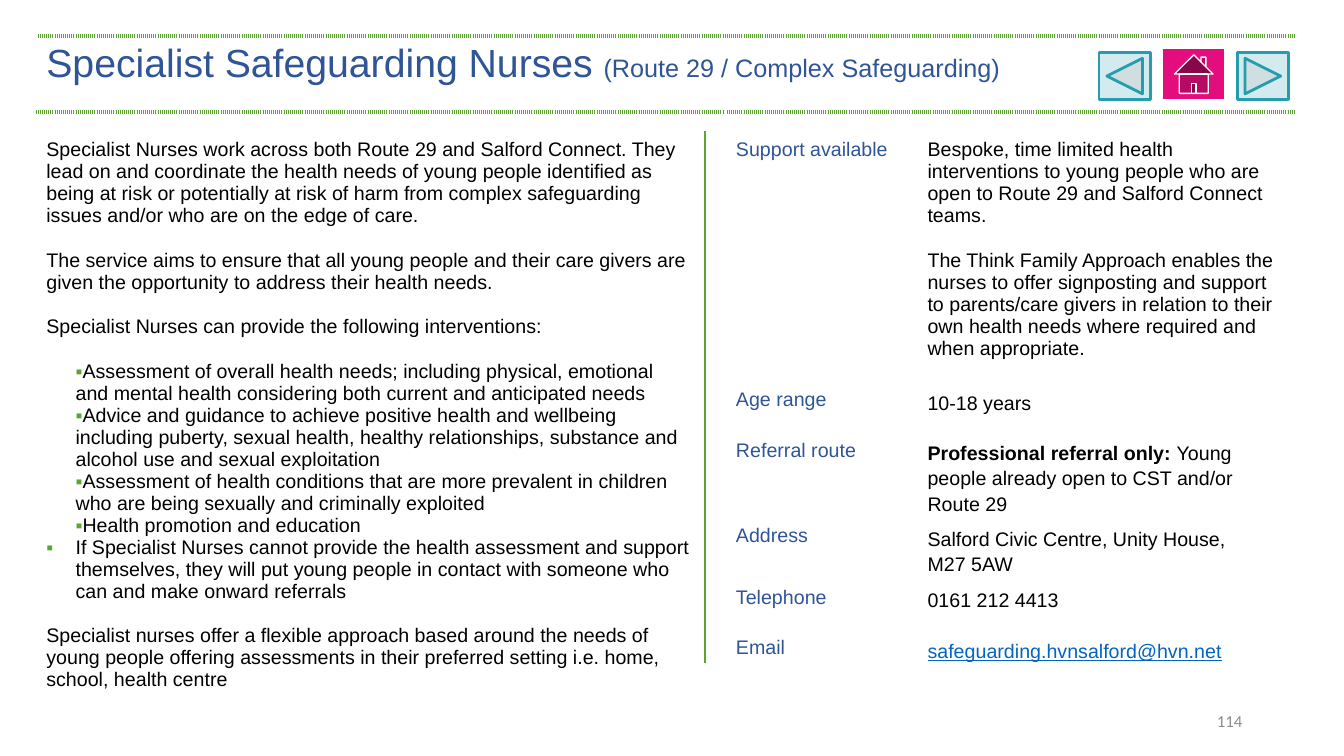
from dataclasses import dataclass

from lxml.etree import SubElement
from pptx import Presentation
from pptx.dml.color import RGBColor
from pptx.enum.shapes import MSO_CONNECTOR, MSO_SHAPE
from pptx.enum.text import MSO_ANCHOR, PP_ALIGN
from pptx.oxml.ns import qn
from pptx.util import Inches, Pt


@dataclass(frozen=True)
class Theme:
    blue: str = "2F5597"
    green: str = "5CA532"
    teal: str = "259DAC"
    pink: str = "E40D7E"
    link: str = "0563C1"
    grey: str = "8C8C8C"
    black: str = "000000"
    white: str = "FFFFFF"
    font: str = "Arial"
    number_font: str = "Calibri"
    title: int = 28
    subtitle: int = 18
    body: int = 14
    number: int = 12


theme = Theme()


def add_run(paragraph, text, size=theme.body, color=theme.black, font=theme.font,
            bold=False, underline=False):
    """Append formatted text; a newline becomes a line break."""
    for index, line in enumerate(text.split("\n")):
        if index:
            paragraph.add_line_break()
        run = paragraph.add_run()
        run.text = line
        run.font.size = Pt(size)
        run.font.name = font
        run.font.bold = bold
        run.font.underline = underline
        run.font.color.rgb = RGBColor.from_string(color)


def add_border(properties, side, color, width, dash):
    line = SubElement(properties, qn(f"a:ln{side}"), w=str(Pt(width)))
    fill = SubElement(line, qn("a:solidFill"))
    SubElement(fill, qn("a:srgbClr"), val=color)
    SubElement(line, qn("a:prstDash"), val=dash)


presentation = Presentation()
presentation.slide_width = Inches(13.33)
presentation.slide_height = Inches(7.5)
slide = presentation.slides.add_slide(presentation.slide_layouts[6])

# Table grid
column_widths = [6.84, 1.9, 3.73]
row_heights = [0.75, 2.7, 0.5, 0.85, 0.61, 0.5, 0.79]
frame = slide.shapes.add_table(
    len(row_heights), len(column_widths), Inches(0.36), Inches(0.36),
    Inches(sum(column_widths)), Inches(sum(row_heights)))
table = frame.table
table.first_row = False
table.horz_banding = False
for column, width in zip(table.columns, column_widths):
    column.width = Inches(width)
for row, height in zip(table.rows, row_heights):
    row.height = Inches(height)

for row_index, row in enumerate(table.rows):
    for cell in row.cells:
        properties = cell._tc.get_or_add_tcPr()
        green_sides = {0: "TB", 1: "T"}.get(row_index, "")
        for side in "LRTB":
            if side in green_sides:
                add_border(properties, side, theme.green, 3, "sysDot")
            else:
                add_border(properties, side, theme.white, 1, "solid")
        cell.fill.background()
        cell.margin_left = cell.margin_right = Inches(0.1)
        cell.margin_top = Inches(0.27 if row_index == 1 else 0.05)
        cell.margin_bottom = 0

# Title row
title_cell = table.cell(0, 0)
title_cell.merge(table.cell(0, 2))
title_cell.vertical_anchor = MSO_ANCHOR.MIDDLE
title_cell.margin_top = 0
title_cell.margin_bottom = Inches(0.2)
title = title_cell.text_frame.paragraphs[0]
add_run(title, "Specialist Safeguarding Nurses ", size=theme.title, color=theme.blue)
add_run(title, "(Route 29 / Complex Safeguarding)", size=theme.subtitle, color=theme.blue)

# Service description: text, space before, left margin, first-line indent, bullet
description = [
    ("Specialist Nurses work across both Route 29 and Salford Connect. They\n"
     "lead on and coordinate the health needs of young people identified as\n"
     "being at risk or potentially at risk of harm from complex safeguarding\n"
     "issues and/or who are on the edge of care.", 0, 0, 0, False),
    ("The service aims to ensure that all young people and their care givers are "
     "given the opportunity to address their health needs.", 16, 0, 0, False),
    ("Specialist Nurses can provide the following interventions:", 16, 0, 0, False),
    ("Assessment of overall health needs; including physical, emotional\n"
     "and mental health considering both current and anticipated needs", 16, 0.29, 0, True),
    ("Advice and guidance to achieve positive health and wellbeing\n"
     "including puberty, sexual health, healthy relationships, substance and\n"
     "alcohol use and sexual exploitation", 0, 0.29, 0, True),
    ("Assessment of health conditions that are more prevalent in children\n"
     "who are being sexually and criminally exploited", 0, 0.29, 0, True),
    ("Health promotion and education", 0, 0.29, 0, True),
    ("If Specialist Nurses cannot provide the health assessment and support "
     "themselves, they will put young people in contact with someone who\n"
     "can and make onward referrals", 0, 0.29, -0.29, True),
    ("Specialist nurses offer a flexible approach based around the needs of\n"
     "young people offering assessments in their preferred setting i.e. home, "
     "school, health centre", 16, 0, 0, False),
]
description_cell = table.cell(1, 0)
description_cell.merge(table.cell(6, 0))
text_frame = description_cell.text_frame
for index, (text, space, margin, indent, bullet) in enumerate(description):
    paragraph = text_frame.add_paragraph() if index else text_frame.paragraphs[0]
    paragraph.space_before = Pt(space)
    properties = paragraph._p.get_or_add_pPr()
    properties.set("marL", str(Inches(margin)))
    properties.set("indent", str(Inches(indent)))
    if bullet:
        bullet_color = SubElement(properties, qn("a:buClr"))
        SubElement(bullet_color, qn("a:srgbClr"), val=theme.green)
        SubElement(properties, qn("a:buFont"), typeface=theme.font)
        SubElement(properties, qn("a:buChar"), char="▪")
    add_run(paragraph, text)

# Service details: label, line spacing, paragraphs made of (text, format) runs
details = [
    ("Support available", 1, [
        [("Bespoke, time limited health interventions to young people who are "
          "open to Route 29 and Salford Connect teams.", {})],
        [("The Think Family Approach enables the nurses to offer signposting and "
          "support to parents/care givers in relation to their own health needs "
          "where required and when appropriate.", {})]]),
    ("Age range", 1.15, [[("10-18 years", {})]]),
    ("Referral route", 1.15, [
        [("Professional referral only: ", {"bold": True}),
         ("Young people already open to CST and/or Route 29", {})]]),
    ("Address", 1.15, [[("Salford Civic Centre, Unity House,\nM27 5AW", {})]]),
    ("Telephone", 1.15, [[("0161 212 4413", {})]]),
    ("Email", 1.15, [[("safeguarding.hvnsalford@hvn.net",
                       {"color": theme.link, "underline": True})]]),
]
for row_index, (label, spacing, paragraphs) in enumerate(details, start=1):
    label_cell = table.cell(row_index, 1)
    add_run(label_cell.text_frame.paragraphs[0], label, color=theme.blue)
    text_frame = table.cell(row_index, 2).text_frame
    for index, runs in enumerate(paragraphs):
        paragraph = text_frame.add_paragraph() if index else text_frame.paragraphs[0]
        paragraph.space_before = Pt(16 if index else 0)
        paragraph.line_spacing = spacing
        for text, run_format in runs:
            add_run(paragraph, text, **run_format)

# Slide number
number_box = slide.shapes.add_textbox(Inches(9.42), Inches(6.95), Inches(3), Inches(0.4))
number_box.text_frame.word_wrap = True
number_box.text_frame.vertical_anchor = MSO_ANCHOR.MIDDLE
number = number_box.text_frame.paragraphs[0]
number.alignment = PP_ALIGN.RIGHT
add_run(number, "114", size=theme.number, color=theme.grey, font=theme.number_font)

# Column divider
divider = slide.shapes.add_connector(
    MSO_CONNECTOR.STRAIGHT, Inches(6.99), Inches(1.3), Inches(6.99), Inches(6.58))
divider.line.color.rgb = RGBColor.from_string(theme.green)
divider.line.width = Pt(1.25)
SubElement(divider._element.spPr, qn("a:effectLst"))

# Navigation buttons: preset, box, fill, opacity in percent, line, line width
buttons = [
    (MSO_SHAPE.ACTION_BUTTON_HOME, (11.53, 0.48, 0.62, 0.51), theme.pink, 100, theme.white, 1),
    (MSO_SHAPE.ACTION_BUTTON_FORWARD_OR_NEXT, (12.27, 0.52, 0.51, 0.47),
     theme.teal, 20, theme.teal, 2),
    (MSO_SHAPE.ACTION_BUTTON_BACK_OR_PREVIOUS, (10.9, 0.52, 0.51, 0.47),
     theme.teal, 20, theme.teal, 2),
]
for preset, box, fill, opacity, line, width in buttons:
    button = slide.shapes.add_shape(preset, *map(Inches, box))
    button.shadow.inherit = False
    button.fill.solid()
    button.fill.fore_color.rgb = RGBColor.from_string(fill)
    if opacity < 100:
        fill_color = button._element.spPr.find(f"{qn('a:solidFill')}/{qn('a:srgbClr')}")
        SubElement(fill_color, qn("a:alpha"), val=str(opacity * 1000))
    button.line.color.rgb = RGBColor.from_string(line)
    button.line.width = Pt(width)

presentation.save("out.pptx")
